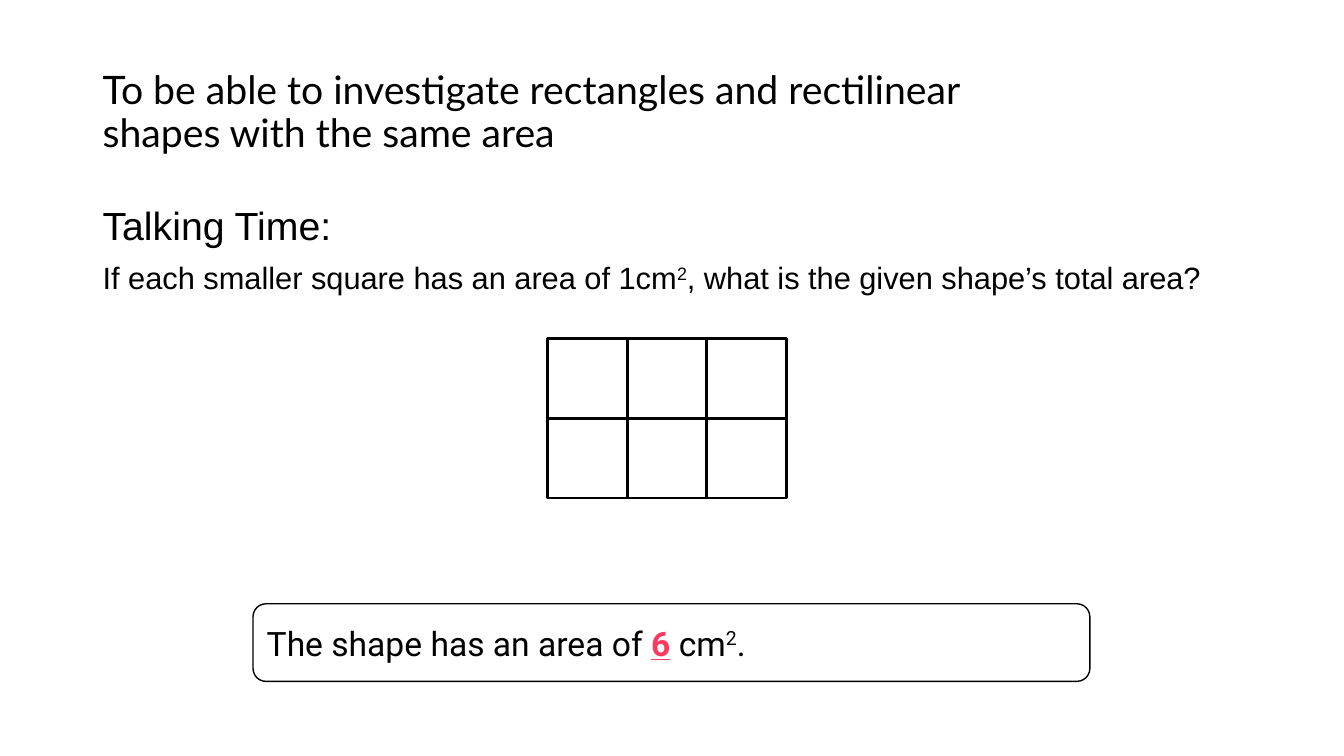
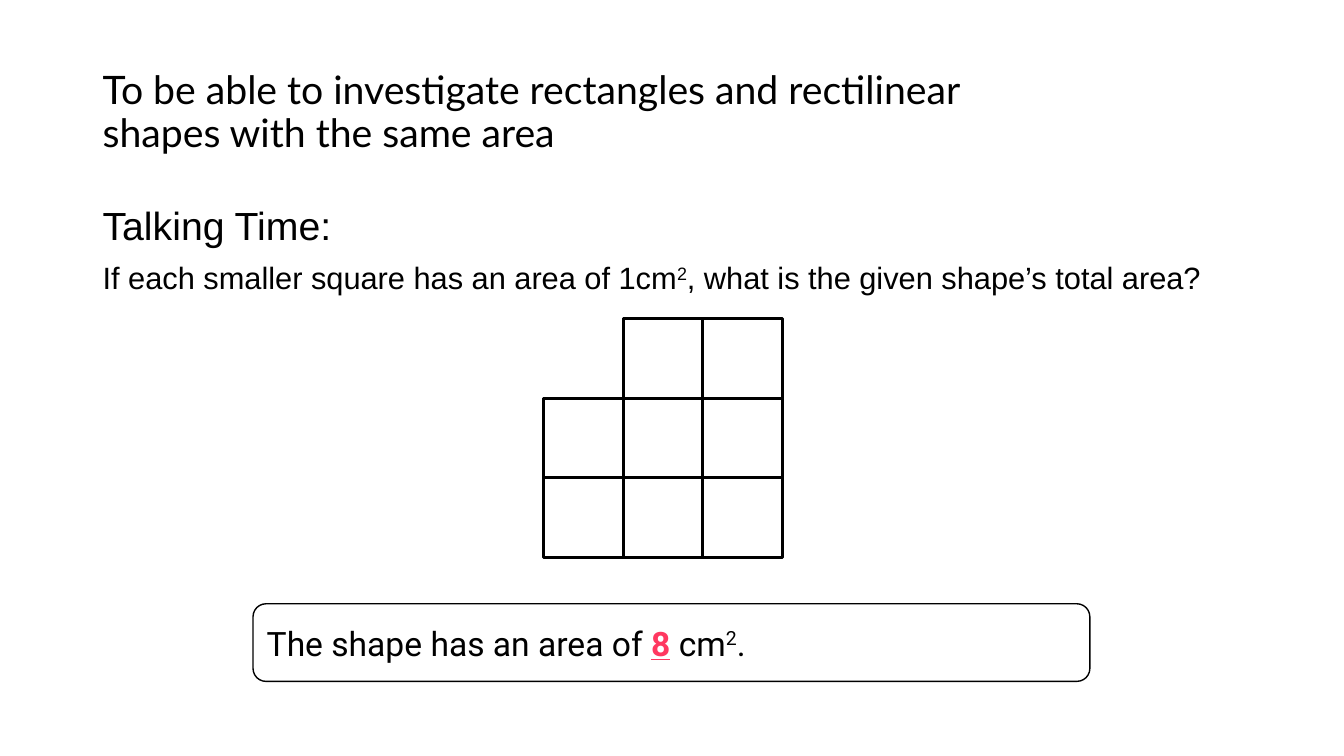
"""Build two slides asking for the area of shapes made of unit squares."""
from pptx import Presentation
from pptx.dml.color import RGBColor
from pptx.enum.shapes import MSO_SHAPE
from pptx.enum.text import MSO_ANCHOR, PP_ALIGN
from pptx.util import Inches, Pt

BLACK, WHITE, PINK = "000000", "FFFFFF", "FF3860"
TITLE = "To be able to investigate rectangles and rectilinear shapes with the same area"
QUESTION = [("If each smaller square has an area of 1cm", ""), ("2", "super"),
            (", what is the given shape’s total area?", "")]
SQUARE = 0.79
SLIDES = [
    (5.43, 3.36, ["###", "###"]),
    (5.39, 3.16, [".##", "###", "###"]),
]


def add_box(s, kind, left, top, width, height, line_width):
    sp = s.shapes.add_shape(kind, Inches(left), Inches(top), Inches(width), Inches(height))
    sp.shadow.inherit = False
    sp.fill.solid()
    sp.fill.fore_color.rgb = RGBColor.from_string(WHITE)
    sp.line.color.rgb = RGBColor.from_string(BLACK)
    sp.line.width = Pt(line_width)
    return sp


def write(p, runs, font, size, spacing=0.9):
    p.alignment = PP_ALIGN.LEFT
    p.line_spacing = spacing
    p.font.name = font
    p.font.size = Pt(size)
    for text, style in runs:
        r = p.add_run()
        r.text = text
        r.font.color.rgb = RGBColor.from_string(PINK if style == "answer" else BLACK)
        if style == "answer":
            r.font.bold = True
            r.font.underline = True
        elif style == "super":
            r._r.get_or_add_rPr().set("baseline", "30000")


prs = Presentation()
prs.slide_width, prs.slide_height = Inches(13.33), Inches(7.5)

for left, top, rows in SLIDES:
    s = prs.slides.add_slide(prs.slide_layouts[6])

    tf = s.shapes.add_textbox(Inches(0.92), Inches(0.4), Inches(9.6), Inches(1.45)).text_frame
    tf.word_wrap = True
    tf.vertical_anchor = MSO_ANCHOR.MIDDLE
    write(tf.paragraphs[0], [(TITLE, "")], "Lato", 28)

    tf = s.shapes.add_textbox(Inches(0.92), Inches(2), Inches(12.07), Inches(1.1)).text_frame
    tf.word_wrap = True
    write(tf.paragraphs[0], [("Talking Time:", "")], "Arial", 28)
    p = tf.add_paragraph()
    p.space_before = Pt(10)
    write(p, QUESTION, "Arial", 22)

    area = "".join(rows).count("#")
    tf = add_box(s, MSO_SHAPE.ROUNDED_RECTANGLE, 2.51, 5.99, 8.3, 0.77, 1).text_frame
    tf.vertical_anchor = MSO_ANCHOR.MIDDLE
    answer = [("The shape has an area of ", ""), (str(area), "answer"),
              (" cm", ""), ("2", "super"), (".", "")]
    write(tf.paragraphs[0], answer, "Roboto", 24, 1.0)

    for i, row in enumerate(rows):
        for j, mark in enumerate(row):
            if mark == "#":
                add_box(s, MSO_SHAPE.RECTANGLE, left + j * SQUARE, top + i * SQUARE,
                        SQUARE, SQUARE, 2)

prs.save("out.pptx")
